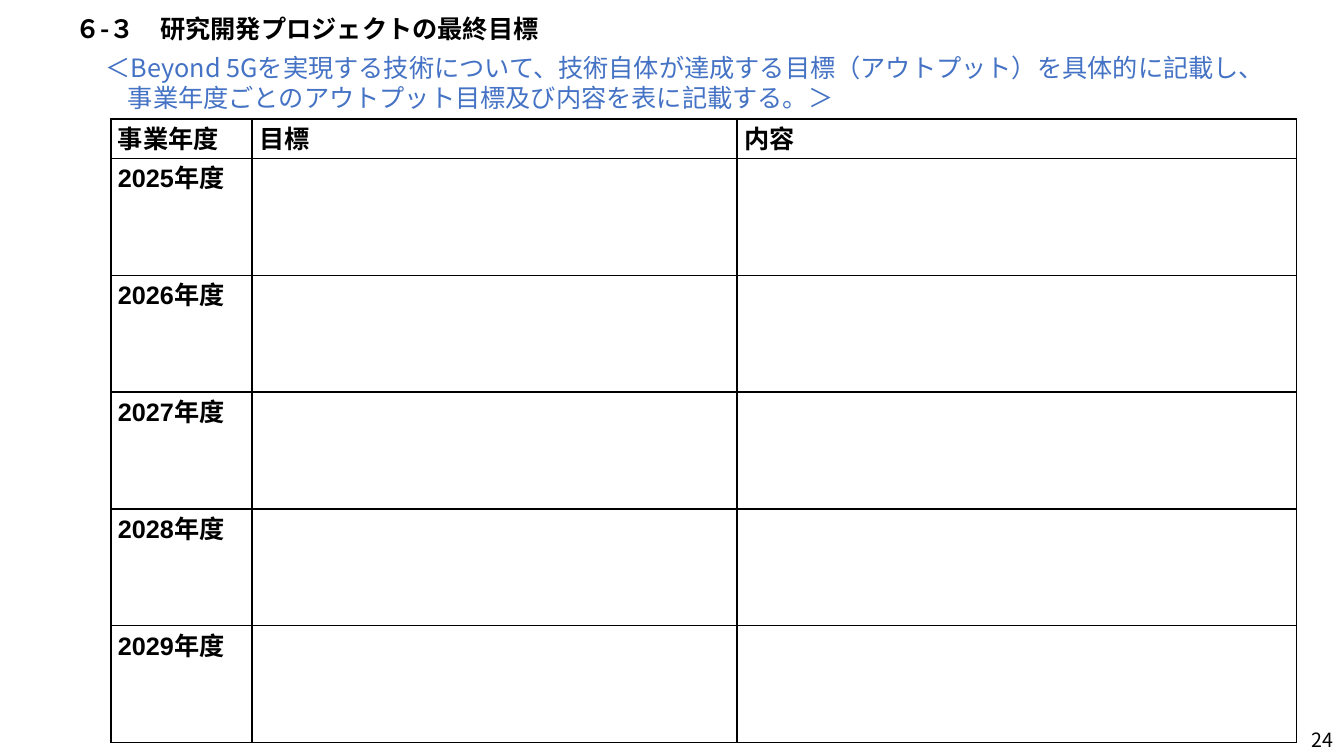
import dataclasses

import lxml.etree
import pptx
import pptx.dml.color
import pptx.enum.text
import pptx.oxml.ns
import pptx.util

Inches = pptx.util.Inches
Align = pptx.enum.text.PP_ALIGN
Anchor = pptx.enum.text.MSO_ANCHOR


@dataclasses.dataclass(frozen=True)
class Theme:
    black: str = "000000"
    guidance: str = "4472C4"
    japanese_font: str = "Noto Sans CJK JP"
    table_font: str = "Arial"
    body_size: int = 18
    number_size: int = 14
    border_width: int = 1


def add_child(parent, tag, **attributes):
    child = lxml.etree.SubElement(parent, pptx.oxml.ns.qn(tag))
    for name, value in attributes.items():
        child.set(name, str(value))
    return child


def write_text(frame, text, *, font, east_asian_font, size, color, bold=False,
               align=Align.LEFT, line_spacing=None, space_before=None):
    paragraph = frame.paragraphs[0]
    paragraph.alignment = align
    paragraph.line_spacing = line_spacing
    if space_before is not None:
        paragraph.space_before = pptx.util.Pt(space_before)
    run = paragraph.add_run()
    run.text = text
    run.font.name = font
    run.font.size = pptx.util.Pt(size)
    run.font.bold = bold
    run.font.color.rgb = pptx.dml.color.RGBColor.from_string(color)
    add_child(run.font._element, "a:ea", typeface=east_asian_font)
    return paragraph


class SlideBuilder:
    def __init__(self, slide, theme):
        self.slide = slide
        self.theme = theme

    def add_text(self, text, left, top, width, height, *, anchor=Anchor.MIDDLE, **text_format):
        shape = self.slide.shapes.add_textbox(
            Inches(left), Inches(top), Inches(width), Inches(height))
        frame = shape.text_frame
        frame.word_wrap = True
        frame.vertical_anchor = anchor
        style = {"font": self.theme.japanese_font, "east_asian_font": self.theme.japanese_font,
                 "size": self.theme.body_size, "color": self.theme.black}
        return write_text(frame, text, **(style | text_format))

    def add_table(self, rows, left, top, column_widths, row_heights):
        shape = self.slide.shapes.add_table(
            len(row_heights), len(column_widths), Inches(left), Inches(top),
            Inches(sum(column_widths)), Inches(sum(row_heights)))
        table = shape.table
        table.first_row = False
        table.horz_banding = False
        for column, width in zip(table.columns, column_widths):
            column.width = Inches(width)
        for row, height, texts in zip(table.rows, row_heights, rows):
            row.height = Inches(height)
            for cell, text in zip(row.cells, texts):
                self.format_cell(cell, text)

    def format_cell(self, cell, text):
        cell.margin_left = cell.margin_right = Inches(0.07)
        cell.margin_top = cell.margin_bottom = 0
        self.add_borders(cell)
        cell.fill.background()
        if text:
            write_text(cell.text_frame, text, font=self.theme.table_font,
                       east_asian_font=self.theme.japanese_font, size=self.theme.body_size,
                       color=self.theme.black, bold=True, align=Align.JUSTIFY)

    def add_borders(self, cell):
        properties = cell._tc.get_or_add_tcPr()
        for side in ("a:lnL", "a:lnR", "a:lnT", "a:lnB"):
            line = add_child(properties, side, w=pptx.util.Pt(self.theme.border_width))
            add_child(add_child(line, "a:solidFill"), "a:srgbClr", val=self.theme.black)


def main():
    presentation = pptx.Presentation()
    presentation.slide_width = Inches(13.33)
    presentation.slide_height = Inches(7.5)
    theme = Theme()
    builder = SlideBuilder(presentation.slides.add_slide(presentation.slide_layouts[6]), theme)

    builder.add_text("24", 12.47, 7.19, 0.85, 0.29, size=theme.number_size, align=Align.RIGHT)
    builder.add_text("６-３\u3000研究開発プロジェクトの最終目標".replace("\u3000", "　"),
                     0.65, 0.14, 11.5, 0.33, bold=True, line_spacing=0.9)
    guidance = builder.add_text(
        "＜Beyond 5Gを実現する技術について、技術自体が達成する目標（アウトプット）を具体的に記載し、"
        "事業年度ごとのアウトプット目標及び内容を表に記載する。＞",
        0.46, 0.47, 12.21, 0.71, anchor=Anchor.TOP, color=theme.guidance, space_before=6)
    indent = guidance._p.get_or_add_pPr()
    indent.set("marL", str(Inches(0.71)))
    indent.set("indent", str(Inches(-0.22)))

    years = range(2025, 2030)
    rows = [("事業年度", "目標", "内容")] + [(f"{year}年度", "", "") for year in years]
    builder.add_table(rows, 1.1, 1.18, (1.4, 4.81, 5.55), [0.39] + [1.16] * len(years))
    presentation.save("out.pptx")


if __name__ == "__main__":
    main()
